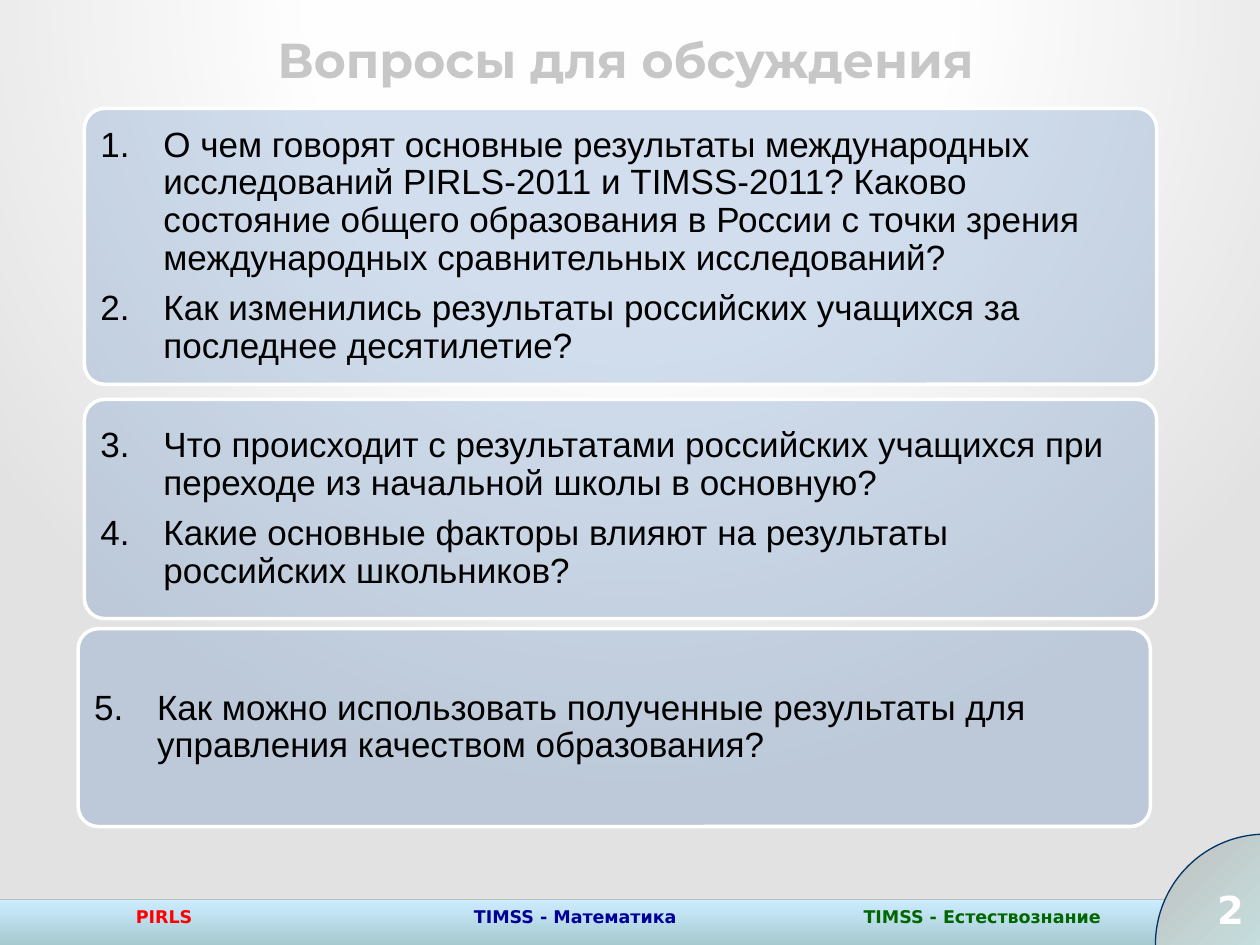
"""Build the slide with the questions for discussion."""
from pptx import Presentation
from pptx.dml.color import RGBColor
from pptx.enum.shapes import MSO_SHAPE
from pptx.enum.text import MSO_ANCHOR, PP_ALIGN
from pptx.oxml import parse_xml
from pptx.oxml.ns import nsdecls
from pptx.util import Inches, Pt

WHITE = RGBColor(0xFF, 0xFF, 0xFF)
BLACK = RGBColor(0, 0, 0)
RED = RGBColor(0xFF, 0, 0)
GREEN = RGBColor(0, 0x66, 0)
BLUE = RGBColor(0, 0, 0x99)
NAVY = RGBColor(0, 0x33, 0x66)
PANEL = RGBColor(0x4F, 0x81, 0xBD)
BAR_COLORS = RGBColor(0xCC, 0xEC, 0xFF), RGBColor(0x92, 0xB6, 0xB6)
CORNER_COLORS = RGBColor(0xBF, 0xBF, 0xBF), RGBColor(0xCC, 0xFF, 0xFF)
CORNER_RADIUS = 0.16


def add_text(p, text, size=20, font="Arial", color=BLACK, bold=False, align=PP_ALIGN.LEFT):
    p.alignment = align
    r = p.add_run()
    r.text = text
    r.font.size = Pt(size)
    r.font.name = font
    r.font.color.rgb = color
    r.font.bold = bold


def add_panel(kind, box, color=None, alpha=100, gradient=None, angle=0):
    sp = slide.shapes.add_shape(kind, *map(Inches, box))
    sp.shadow.inherit = False
    sp.line.fill.background()
    if gradient:
        sp.fill.gradient()
        sp.fill.gradient_angle = angle
        for stop, rgb in zip(sp.fill.gradient_stops, gradient):
            stop.color.rgb = rgb
    else:
        sp.fill.solid()
        sp.fill.fore_color.rgb = color
        clr = sp.element.spPr.find(".//{*}srgbClr")
        clr.append(parse_xml(f'<a:alpha {nsdecls("a")} val="{alpha * 1000}"/>'))
    return sp


prs = Presentation()
prs.slide_width, prs.slide_height = Inches(10), Inches(7.5)
slide = prs.slides.add_slide(prs.slide_layouts[5])

slide.background.fill.gradient()
grad = slide.element.find(".//{*}gradFill")
stops = "".join(
    f'<a:gs pos="{pos * 1000}"><a:srgbClr val="{rgb}"/></a:gs>'
    for pos, rgb in [(0, "FFFFFF"), (40, "FEFEFE"), (100, "7F7F7F")]
)
grad.getparent().replace(grad, parse_xml(
    f'<a:gradFill {nsdecls("a")} rotWithShape="1"><a:gsLst>{stops}</a:gsLst>'
    '<a:path path="circle"><a:fillToRect l="50000" t="-80000" r="50000" b="180000"/>'
    "</a:path></a:gradFill>"
))

add_panel(MSO_SHAPE.RECTANGLE, (0, 7.14, 9.96, 0.55), gradient=BAR_COLORS, angle=270)
add_panel(MSO_SHAPE.RECTANGLE, (0, 0, 10, 7.14), color=WHITE, alpha=78)
corner = add_panel(MSO_SHAPE.OVAL, (9.17, 6.62, 1.75, 1.75), gradient=CORNER_COLORS, angle=315)
corner.line.color.rgb = NAVY
corner.line.width = Pt(0.75)

labels = [
    ("PIRLS", (0.98, 7.14, 0.79, 0.34), 10, RED, PP_ALIGN.LEFT),
    ("TIMSS - Математика", (3.03, 7.14, 3.07, 0.34), 10, BLUE, PP_ALIGN.CENTER),
    ("TIMSS - Естествознание", (6.26, 7.14, 3.07, 0.34), 10, GREEN, PP_ALIGN.CENTER),
    ("2", (9.17, 6.98, 0.8, 0.47), 22, WHITE, PP_ALIGN.RIGHT),
]
for text, box, size, color, align in labels:
    tf = slide.shapes.add_textbox(*map(Inches, box)).text_frame
    tf.word_wrap = True
    add_text(tf.paragraphs[0], text, size=size, font="DejaVu Sans", color=color, bold=True, align=align)

title = slide.shapes.title
title.left, title.top, title.width, title.height = map(Inches, (0.75, 0.08, 8.43, 0.78))
title.text_frame.vertical_anchor = MSO_ANCHOR.MIDDLE
add_text(title.text_frame.paragraphs[0], "Вопросы для обсуждения", size=28, font="Montserrat",
         bold=True, align=PP_ALIGN.CENTER)

groups = [
    ((0.67, 0.86, 8.51, 2.19), [
        "О чем говорят основные результаты международных исследований PIRLS-2011 и TIMSS-2011? "
        "Каково состояние общего образования в России с точки зрения международных "
        "сравнительных исследований?",
        "Как изменились результаты российских учащихся за последнее десятилетие?",
    ]),
    ((0.67, 3.17, 8.51, 1.74), [
        "Что происходит с результатами российских учащихся при переходе из начальной школы в основную?",
        "Какие основные факторы влияют на результаты российских школьников?",
    ]),
    ((0.62, 4.99, 8.51, 1.57), [
        "Как можно использовать полученные результаты для управления качеством образования?",
    ]),
]
first = 1
for box, questions in groups:
    sp = add_panel(MSO_SHAPE.ROUNDED_RECTANGLE, box, color=PANEL, alpha=25)
    sp.adjustments[0] = CORNER_RADIUS / box[3]
    sp.line.color.rgb = WHITE
    sp.line.width = Pt(2)
    tf = sp.text_frame
    tf.word_wrap = True
    tf.vertical_anchor = MSO_ANCHOR.MIDDLE
    tf.margin_left = tf.margin_top = tf.margin_right = tf.margin_bottom = Inches(0.08)
    for i, question in enumerate(questions):
        p = tf.paragraphs[0] if i == 0 else tf.add_paragraph()
        p.line_spacing = 0.9
        p.space_after = Pt(7)
        pPr = p._p.get_or_add_pPr()
        pPr.set("marL", str(Inches(0.5)))
        pPr.set("indent", str(-Inches(0.5)))
        pPr.append(parse_xml(f'<a:buAutoNum {nsdecls("a")} type="arabicPeriod" startAt="{first}"/>'))
        add_text(p, question)
    first += len(questions)

prs.save("out.pptx")
